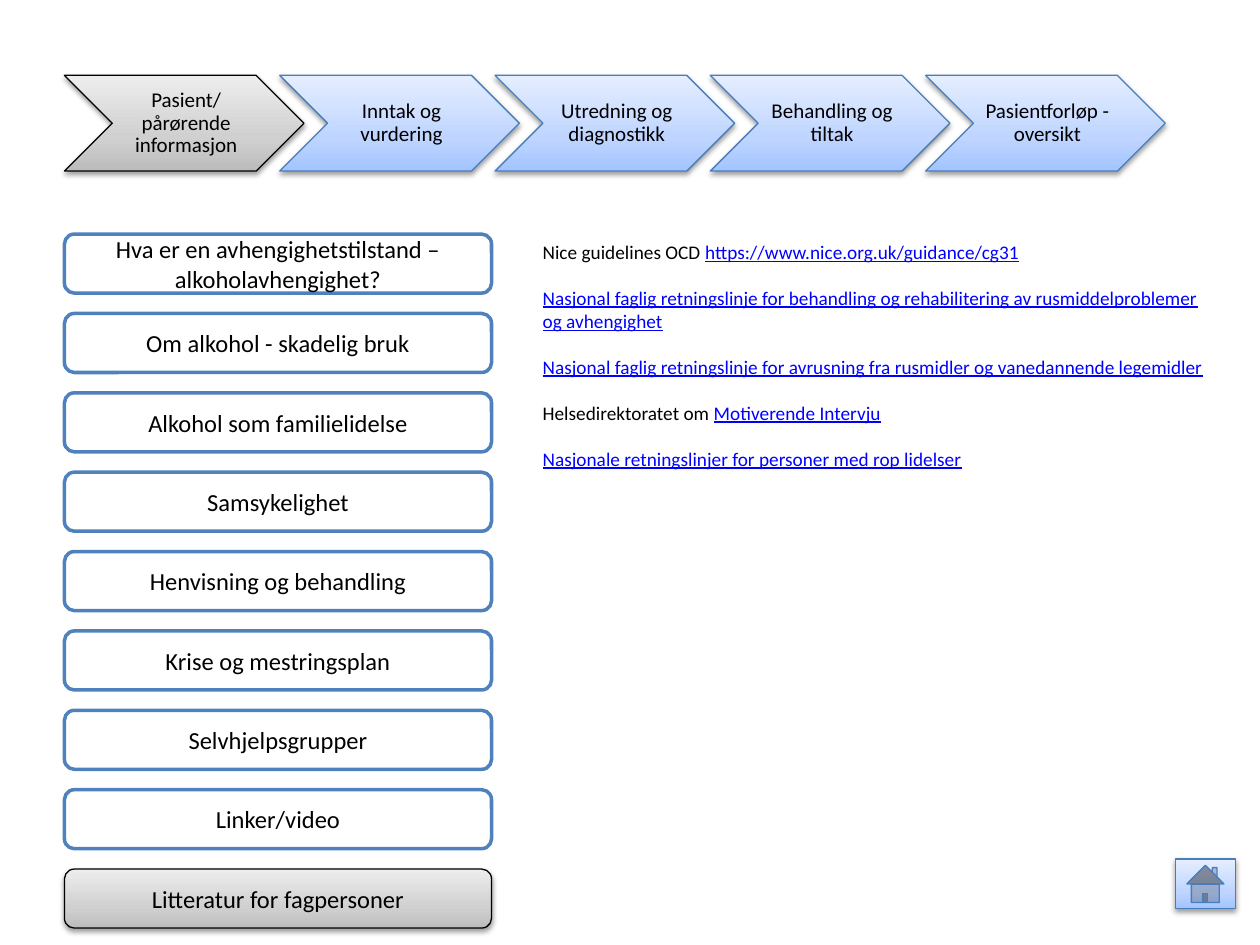
"""Build the navigation slide with literature for professionals."""
from copy import deepcopy

from lxml import etree
from pptx import Presentation
from pptx.dml.color import RGBColor
from pptx.enum.shapes import MSO_SHAPE
from pptx.enum.text import MSO_ANCHOR, PP_ALIGN
from pptx.oxml.ns import qn
from pptx.util import Cm, Pt

CHEVRON = MSO_SHAPE.CHEVRON
ROUNDED = MSO_SHAPE.ROUNDED_RECTANGLE
HOME = MSO_SHAPE.ACTION_BUTTON_HOME
MIDDLE, TOP = MSO_ANCHOR.MIDDLE, MSO_ANCHOR.TOP
CENTER, LEFT = PP_ALIGN.CENTER, PP_ALIGN.LEFT

THEME = {
    "font": "Calibri", "text": "000000", "link": "0000FF",
    "step_size": 12, "menu_size": 14, "body_size": 11,
    "blue": {"fill": ("A3C4FF", "BFD5FF", "E5EEFF"), "line": "4A7EBB", "weight": 0.75},
    "grey": {"fill": ("BCBCBC", "D0D0D0", "EDEDED"), "line": "000000", "weight": 0.75},
    "white": {"fill": "FFFFFF", "line": "4F81BD", "weight": 2},
}
GRADIENT_POSITIONS = (0, 0.35, 1)

STEPS = [
    "Pasient/ pårørende informasjon", "Inntak og vurdering",
    "Utredning og diagnostikk", "Behandling og tiltak", "Pasientforløp - oversikt",
]
CURRENT_STEP = STEPS[0]
MENU = [
    "Hva er en avhengighetstilstand – alkoholavhengighet?",
    "Om alkohol - skadelig bruk", "Alkohol som familielidelse", "Samsykelighet",
    "Henvisning og behandling", "Krise og mestringsplan", "Selvhjelpsgrupper",
    "Linker/video", "Litteratur for fagpersoner",
]
CURRENT_MENU = MENU[-1]
REFERENCES = [
    ("Nice guidelines OCD ", "https://www.nice.org.uk/guidance/cg31"),
    ("", "Nasjonal faglig retningslinje for behandling og rehabilitering av "
         "rusmiddelproblemer og avhengighet"),
    ("", "Nasjonal faglig retningslinje for avrusning fra rusmidler og "
         "vanedannende legemidler"),
    ("Helsedirektoratet om ", "Motiverende Intervju"),
    ("", "Nasjonale retningslinjer for personer med rop lidelser"),
]

MARGIN = 1.3
STEP_TOP, STEP_WIDTH, STEP_HEIGHT, STEP_PITCH = 1.52, 4.83, 1.93, 4.34
MENU_TOP, MENU_WIDTH, MENU_HEIGHT, MENU_PITCH = 4.72, 8.61, 1.19, 1.6


def color(name):
    return RGBColor.from_string(name)


def write_text(frame, paragraphs, size, align=LEFT, anchor=TOP, gap=0, spacing=None):
    """Write paragraphs given as (plain, link) pairs."""
    frame.word_wrap = True
    frame.vertical_anchor = anchor
    for index, (plain, link) in enumerate(paragraphs):
        paragraph = frame.add_paragraph() if index else frame.paragraphs[0]
        paragraph.alignment = align
        paragraph.line_spacing = spacing
        if index:
            paragraph.space_before = Pt(gap)
        for text, is_link in ((plain, False), (link, True)):
            if text:
                run = paragraph.add_run()
                run.text = text
                run.font.name = THEME["font"]
                run.font.size = Pt(size)
                run.font.underline = is_link
                run.font.color.rgb = color(THEME["link" if is_link else "text"])


def fill_gradient(shape, colors):
    shape.fill.gradient()
    shape.fill.gradient_angle = 90
    stop_list = shape.element.spPr.find(qn("a:gradFill")).find(qn("a:gsLst"))
    stop_list.insert(1, deepcopy(stop_list[0]))
    for stop, name, position in zip(shape.fill.gradient_stops, colors, GRADIENT_POSITIONS):
        stop.color.rgb = color(name)
        stop.position = position


def add_shadow(shape):
    effects = shape.element.spPr.find(qn("a:effectLst"))
    shadow = etree.SubElement(effects, qn("a:outerShdw"), blurRad=str(Pt(3.1)),
                              dist=str(Pt(1.6)), dir="5400000", rotWithShape="0")
    shade = etree.SubElement(shadow, qn("a:srgbClr"), val="000000")
    etree.SubElement(shade, qn("a:alpha"), val="38000")


def add_button(slide, kind, left, top, width, height, style):
    shape = slide.shapes.add_shape(kind, Cm(left), Cm(top), Cm(width), Cm(height))
    look = THEME[style]
    shape.shadow.inherit = False
    if style == "white":
        shape.fill.solid()
        shape.fill.fore_color.rgb = color(look["fill"])
    else:
        fill_gradient(shape, look["fill"])
        add_shadow(shape)
    shape.line.color.rgb = color(look["line"])
    shape.line.width = Pt(look["weight"])
    return shape


def add_steps(slide):
    for index, label in enumerate(STEPS):
        style = "grey" if label == CURRENT_STEP else "blue"
        step = add_button(slide, CHEVRON, MARGIN + index * STEP_PITCH, STEP_TOP,
                          STEP_WIDTH, STEP_HEIGHT, style)
        frame = step.text_frame
        frame.margin_left = Cm(0.13)
        frame.margin_right = frame.margin_top = frame.margin_bottom = Cm(0.05)
        write_text(frame, [(label, "")], THEME["step_size"], CENTER, MIDDLE, spacing=0.9)


def add_menu(slide):
    for index, label in enumerate(MENU):
        style = "grey" if label == CURRENT_MENU else "white"
        button = add_button(slide, ROUNDED, MARGIN, MENU_TOP + index * MENU_PITCH,
                            MENU_WIDTH, MENU_HEIGHT, style)
        write_text(button.text_frame, [(label, "")], THEME["menu_size"], CENTER, MIDDLE)


def main():
    presentation = Presentation()
    presentation.slide_width, presentation.slide_height = Cm(25.4), Cm(19.05)
    slide = presentation.slides.add_slide(presentation.slide_layouts[6])
    add_steps(slide)
    references = slide.shapes.add_textbox(Cm(10.69), Cm(MENU_TOP), Cm(14), Cm(14.33))
    write_text(references.text_frame, REFERENCES, THEME["body_size"], gap=13)
    add_button(slide, HOME, 23.7, 17.32, 1.2, 1, "blue")
    add_menu(slide)
    presentation.save("out.pptx")


if __name__ == "__main__":
    main()
